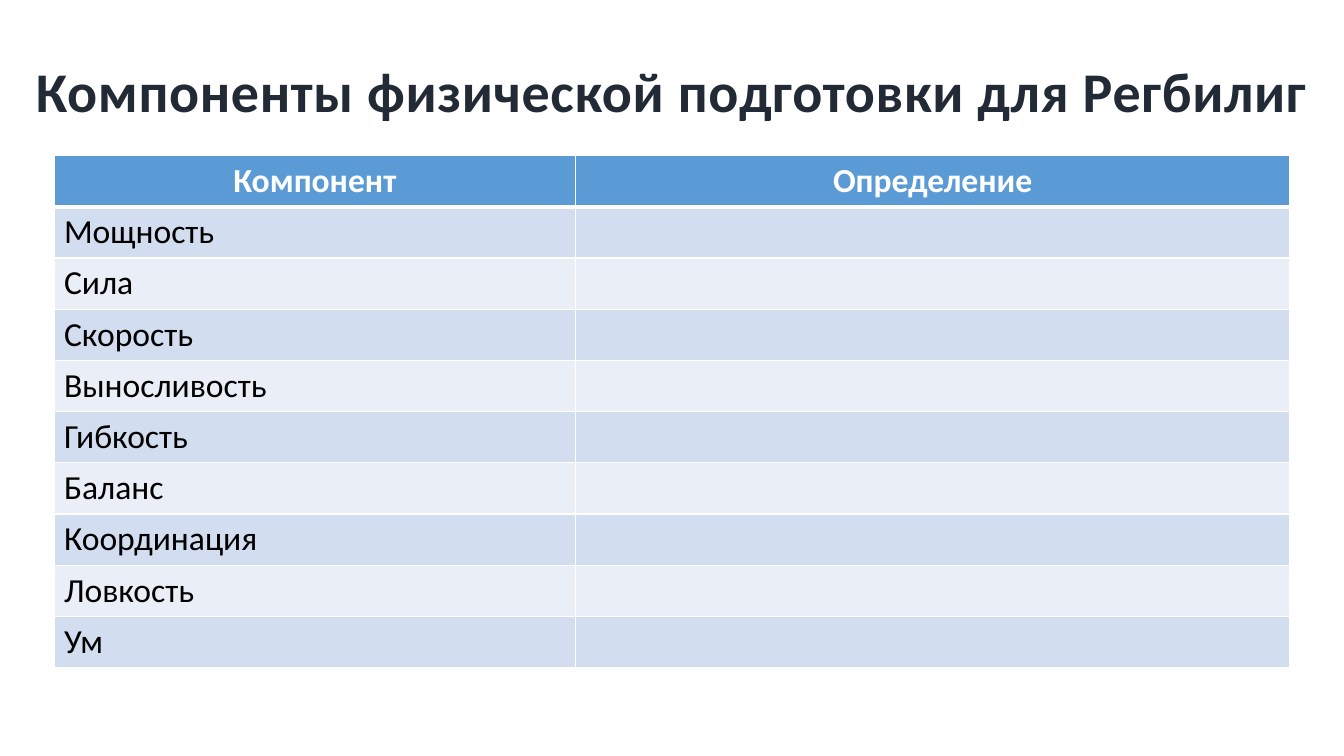
"""Build the slide with the table of rugby league fitness components."""
import pptx
import pptx.dml.color
import pptx.enum.text
import pptx.oxml
import pptx.oxml.ns
import pptx.util

TITLE = "Компоненты физической подготовки для Регбилиг"
HEADS = ["Компонент", "Определение"]
PARTS = ["Мощность", "Сила", "Скорость", "Выносливость", "Гибкость",
         "Баланс", "Координация", "Ловкость", "Ум"]
WIDTHS = [13.15, 17.99]
ROW = 1.29
BANDS = ["D2DEEF", "EAEFF7"]

Cm = pptx.util.Cm
Pt = pptx.util.Pt
ALIGN = pptx.enum.text.PP_ALIGN
ANCHOR = pptx.enum.text.MSO_ANCHOR


def tint(target, code):
    target.rgb = pptx.dml.color.RGBColor.from_string(code)


def write(frame, text, size, code, bold, align):
    line = frame.paragraphs[0]
    line.alignment = align
    run = line.add_run()
    run.text = text
    run.font.name = "Calibri"
    run.font.size = Pt(size)
    run.font.bold = bold
    tint(run.font.color, code)
    return run


def edge(cell, side, width):
    cell._tc.get_or_add_tcPr().append(pptx.oxml.parse_xml(
        f'<a:{side} {pptx.oxml.ns.nsdecls("a")} w="{Pt(width)}"><a:solidFill>'
        f'<a:srgbClr val="FFFFFF"/></a:solidFill></a:{side}>'))


def main():
    deck = pptx.Presentation()
    deck.slide_width, deck.slide_height = Cm(33.87), Cm(19.05)
    slide = deck.slides.add_slide(deck.slide_layouts[6])

    box = slide.shapes.add_textbox(0, Cm(0.45), deck.slide_width, Cm(3.65))
    frame = box.text_frame
    frame.word_wrap = True
    frame.vertical_anchor = ANCHOR.MIDDLE
    run = write(frame, TITLE, 40, "222A35", True, ALIGN.CENTER)
    run.font._element.set("spc", "50")

    rows = [HEADS] + [[part, ""] for part in PARTS]
    table = slide.shapes.add_table(
        len(rows), len(HEADS), Cm(1.36), Cm(3.92),
        Cm(sum(WIDTHS)), Cm(ROW * len(rows))).table
    for col, width in zip(table.columns, WIDTHS):
        col.width = Cm(width)
    for r, row in enumerate(rows):
        table.rows[r].height = Cm(ROW)
        head = r == 0
        for c, text in enumerate(row):
            cell = table.cell(r, c)
            cell.vertical_anchor = ANCHOR.MIDDLE
            edge(cell, "lnL", 1)
            edge(cell, "lnR", 1)
            edge(cell, "lnT", 3 if r == 1 else 1)
            edge(cell, "lnB", 3 if head else 1)
            cell.fill.solid()
            tint(cell.fill.fore_color, "5B9BD5" if head else BANDS[(r - 1) % 2])
            if text:
                write(cell.text_frame, text, 24, "FFFFFF" if head else "000000",
                      head, ALIGN.CENTER if head else ALIGN.LEFT)

    deck.save("out.pptx")


if __name__ == "__main__":
    main()
